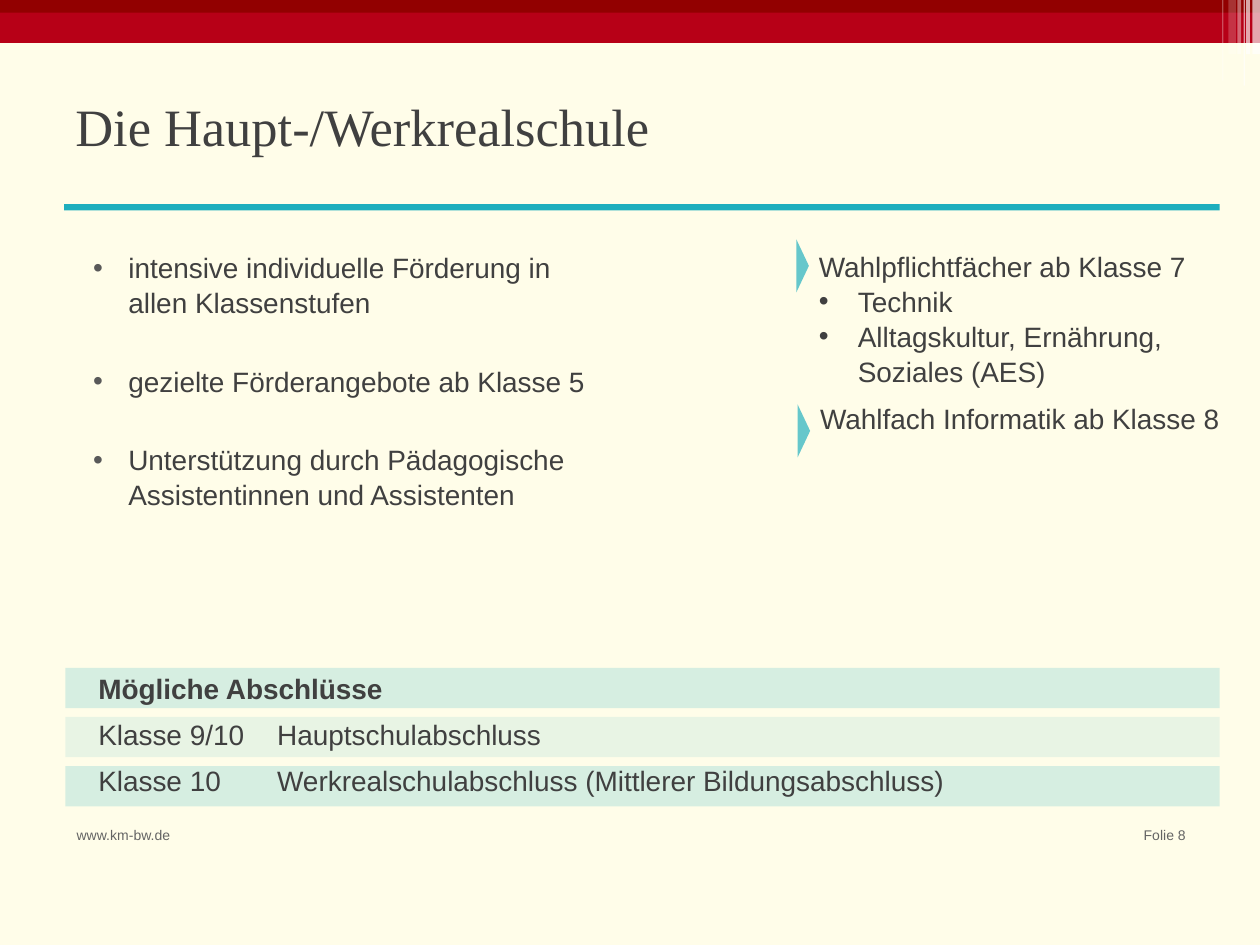
import pptx
import pptx.dml.color
import pptx.enum.shapes
import pptx.enum.text
import pptx.oxml.ns
import pptx.util
from dataclasses import dataclass
from lxml import etree

Inches = pptx.util.Inches
Pt = pptx.util.Pt
PRESET = pptx.enum.shapes.MSO_SHAPE
ALIGN = pptx.enum.text.PP_ALIGN
ANCHOR = pptx.enum.text.MSO_ANCHOR
qn = pptx.oxml.ns.qn


@dataclass(frozen=True)
class Theme:
    background: str = "FFFDE9"
    red: str = "B70017"
    dark_red: str = "920000"
    white: str = "FFFFFF"
    teal: str = "1EAEBD"
    text: str = "404040"
    bullet: str = "595959"
    footer: str = "646464"
    heading_font: str = "Times New Roman"
    body_font: str = "Arial"
    title_size: int = 30
    body_size: int = 16
    footer_size: int = 8
    line_spacing: float = 1.04


THEME = Theme()


def rgb(color):
    return pptx.dml.color.RGBColor.from_string(color)


def add_block(slide, box, color, opacity=100, preset=PRESET.RECTANGLE):
    block = slide.shapes.add_shape(preset, *map(Inches, box))
    block.shadow.inherit = False
    block.line.fill.background()
    block.fill.solid()
    block.fill.fore_color.rgb = rgb(color)
    if opacity < 100:
        tint = block.fill._xPr.find(".//" + qn("a:srgbClr"))
        etree.SubElement(tint, qn("a:alpha"), val=str(opacity * 1000))
    return block


def add_marker(slide, left, top):
    marker = add_block(slide, (left, top, 0.1, 0.42), THEME.teal, 68, PRESET.PENTAGON)
    marker.adjustments[0] = 0.99


def style(paragraph, size=THEME.body_size, color=THEME.text, font=THEME.body_font, bold=False):
    paragraph.font.size = Pt(size)
    paragraph.font.name = font
    paragraph.font.bold = bold
    paragraph.font.color.rgb = rgb(color)


def set_bullet(paragraph, indent, hanging, color):
    properties = paragraph._p.get_or_add_pPr()
    properties.set("marL", str(Inches(indent)))
    properties.set("indent", str(-Inches(hanging)))
    bullet_color = etree.SubElement(properties, qn("a:buClr"))
    etree.SubElement(bullet_color, qn("a:srgbClr"), val=color)
    etree.SubElement(properties, qn("a:buFont"), typeface=THEME.body_font)
    etree.SubElement(properties, qn("a:buChar"), char="•")


def add_frame(slide, box):
    frame = slide.shapes.add_textbox(*map(Inches, box)).text_frame
    frame.word_wrap = True
    return frame


def add_line(slide, box, text, align=ALIGN.LEFT, anchor=ANCHOR.TOP, **font):
    frame = add_frame(slide, box)
    frame.vertical_anchor = anchor
    paragraph = frame.paragraphs[0]
    paragraph.text = text
    paragraph.alignment = align
    style(paragraph, **font)


def add_list(slide, box, items, bullet, heading=None, gap=0, right_inset=0.1):
    frame = add_frame(slide, box)
    frame.margin_right = Inches(right_inset)
    lines = [heading, *items] if heading else items
    for number, line in enumerate(lines):
        paragraph = frame.add_paragraph() if number else frame.paragraphs[0]
        paragraph.text = line
        paragraph.line_spacing = THEME.line_spacing
        if number and gap:
            paragraph.space_before = Pt(gap)
        if line != heading:
            set_bullet(paragraph, *bullet)
        style(paragraph)


def add_header(slide):
    add_block(slide, (0, 0, 10, 0.34), THEME.red)
    add_block(slide, (0, 0, 10, 0.1), THEME.dark_red)
    # Translucent stripes in the right corner: left, width, height, opacity
    for left, width, height, opacity in (
        (9.89, 0.03, 0.43, 65),
        (9.94, 0.06, 0.43, 65),
        (9.7, 0.01, 0.64, 30),
        (9.87, 0.01, 0.68, 60),
        (9.75, 0.06, 0.43, 20),
        (9.82, 0.03, 0.43, 40),
    ):
        add_block(slide, (left, 0, width, height), THEME.white, opacity)


def add_degrees(slide, heading, degrees):
    # Tinted bands behind the table
    for row, opacity in enumerate((18, 10, 18)):
        add_block(slide, (0.52, 5.3 + row * 0.39, 9.16, 0.32), THEME.teal, opacity)

    row_height = 0.35
    rows = [(heading, ""), *degrees]
    table = slide.shapes.add_table(
        len(rows), 2, Inches(0.68), Inches(5.3), Inches(8.5), Inches(row_height * len(rows))
    ).table
    table.first_row = table.horz_banding = False
    for column, width in zip(table.columns, (1.42, 7.08)):
        column.width = Inches(width)
    table.cell(0, 0).merge(table.cell(0, 1))
    for row, texts in enumerate(rows):
        for column, text in enumerate(texts):
            cell = table.cell(row, column)
            cell.fill.background()
            # Cells carry no borders
            for number, edge in enumerate(("a:lnL", "a:lnR", "a:lnT", "a:lnB")):
                border = etree.Element(qn(edge), w="0")
                etree.SubElement(border, qn("a:noFill"))
                cell._tc.get_or_add_tcPr().insert(number, border)
            paragraph = cell.text_frame.paragraphs[0]
            paragraph.text = text
            style(paragraph, bold=row == 0)


def main():
    presentation = pptx.Presentation()
    presentation.slide_width = Inches(10)
    presentation.slide_height = Inches(7.5)
    slide = presentation.slides.add_slide(presentation.slide_layouts[6])
    slide.background.fill.solid()
    slide.background.fill.fore_color.rgb = rgb(THEME.background)

    # Header and title
    add_header(slide)
    add_line(slide, (0.5, 0.61, 9, 0.77), "Die Haupt-/Werkrealschule", anchor=ANCHOR.MIDDLE,
             size=THEME.title_size, font=THEME.heading_font)
    add_block(slide, (0.51, 1.62, 9.17, 0.05), THEME.teal)

    # Support offers
    add_list(slide, (0.52, 1.93, 4.72, 2.68), [
        "intensive individuelle Förderung in allen Klassenstufen",
        "gezielte Förderangebote ab Klasse 5",
        "Unterstützung durch Pädagogische Assistentinnen und Assistenten",
    ], bullet=(0.4, 0.28, THEME.bullet), gap=25, right_inset=0.55)

    # Elective subjects
    add_list(slide, (6.4, 1.92, 3.25, 1.65),
             ["Technik", "Alltagskultur, Ernährung, Soziales (AES)"],
             bullet=(0.31, 0.31, THEME.text), heading="Wahlpflichtfächer ab Klasse 7")
    add_line(slide, (6.41, 3.14, 3.55, 0.4), "Wahlfach Informatik ab Klasse 8")
    add_marker(slide, 6.32, 1.9)
    add_marker(slide, 6.33, 3.21)

    # Degrees
    add_degrees(slide, "Mögliche Abschlüsse", [
        ("Klasse 9/10", "Hauptschulabschluss"),
        ("Klasse 10", "Werkrealschulabschluss (Mittlerer Bildungsabschluss)"),
    ])

    # Footer
    footer = {"size": THEME.footer_size, "color": THEME.footer}
    add_line(slide, (0.51, 6.51, 1, 0.39), "www.km-bw.de", **footer)
    add_line(slide, (8.54, 6.51, 0.97, 0.39), "Folie 8", align=ALIGN.RIGHT, **footer)

    presentation.save("out.pptx")


if __name__ == "__main__":
    main()
